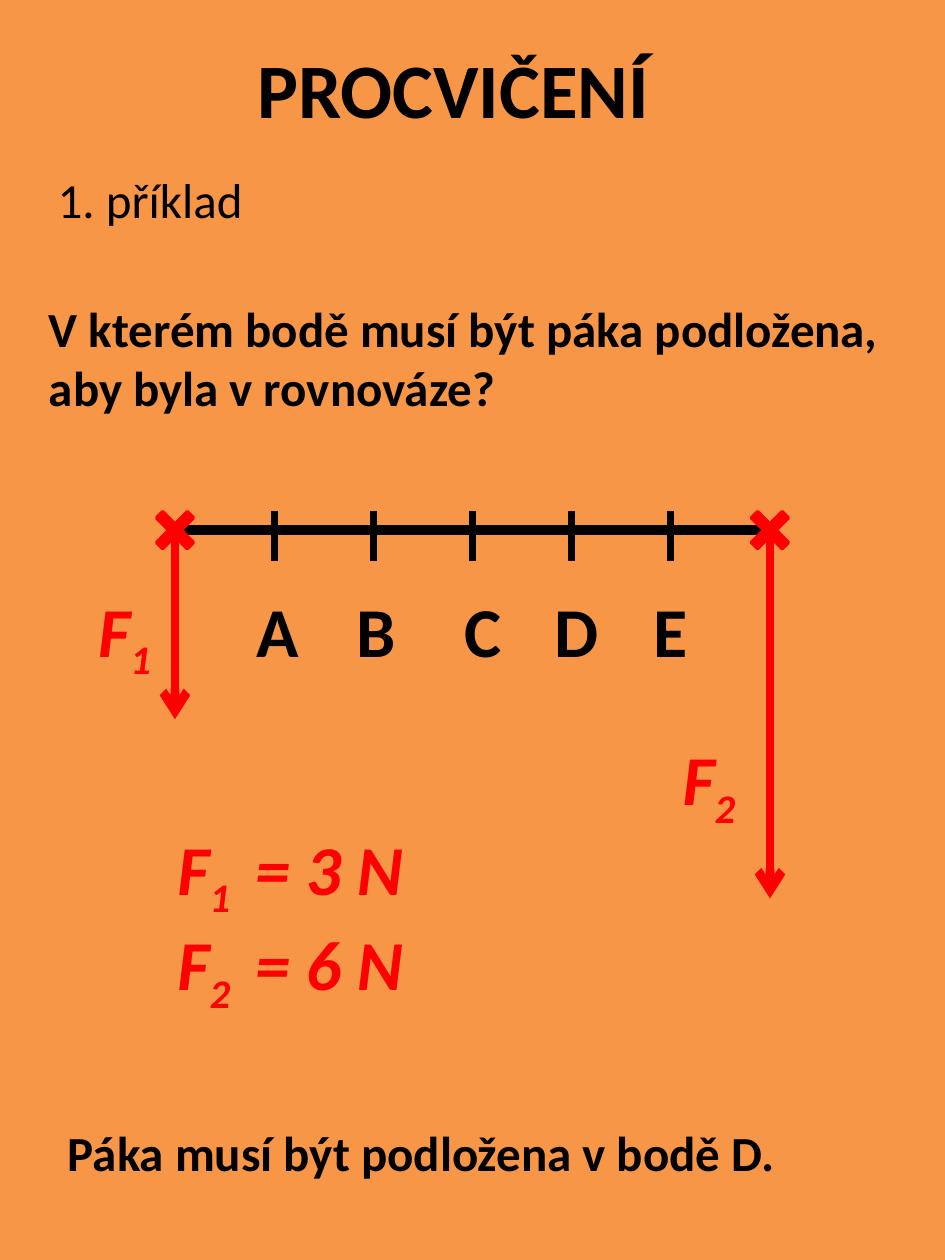
from dataclasses import dataclass
from typing import NamedTuple

import pptx
import pptx.dml.color
import pptx.enum.shapes
import pptx.enum.text
import pptx.oxml.ns
import pptx.util
from lxml import etree

Pt = pptx.util.Pt
RGBColor = pptx.dml.color.RGBColor
qn = pptx.oxml.ns.qn


@dataclass(frozen=True)
class Theme:
    font: str = "Calibri"
    background: RGBColor = RGBColor(0xF7, 0x96, 0x46)
    ink: RGBColor = RGBColor(0, 0, 0)
    force: RGBColor = RGBColor(0xFF, 0, 0)
    title: int = 44
    label: int = 40
    body: int = 28


THEME = Theme()


class Span(NamedTuple):
    text: str
    subscript: bool = False


class Frame(NamedTuple):
    left: float
    top: float
    width: float
    height: float


@dataclass(frozen=True)
class Label:
    frame: Frame
    lines: list[list[Span]]
    size: int
    color: RGBColor = THEME.ink
    bold: bool = True
    italic: bool = False
    wrap: bool = False


class Line(NamedTuple):
    start: tuple[float, float]
    end: tuple[float, float]
    color: RGBColor
    width: float
    arrow: bool = False


def place(shape, frame: Frame) -> None:
    shape.left, shape.top, shape.width, shape.height = map(Pt, frame)


def write_text(box, label: Label) -> None:
    text = box.text_frame
    text.word_wrap = label.wrap
    text.auto_size = pptx.enum.text.MSO_AUTO_SIZE.SHAPE_TO_FIT_TEXT
    text.vertical_anchor = pptx.enum.text.MSO_ANCHOR.TOP
    for number, spans in enumerate(label.lines):
        para = text.add_paragraph() if number else text.paragraphs[0]
        para.alignment = pptx.enum.text.PP_ALIGN.LEFT
        for span in spans:
            run = para.add_run()
            run.text = span.text
            run.font.name = THEME.font
            run.font.size = Pt(label.size)
            run.font.bold = label.bold
            run.font.italic = label.italic
            run.font.color.rgb = label.color
            if span.subscript:
                run.font._element.set("baseline", "-25000")


def add_label(page, label: Label) -> None:
    write_text(page.shapes.add_textbox(*map(Pt, label.frame)), label)


def add_line(page, line: Line) -> None:
    connector = page.shapes.add_connector(
        pptx.enum.shapes.MSO_CONNECTOR.STRAIGHT, *map(Pt, line.start + line.end)
    )
    connector.line.color.rgb = line.color
    connector.line.width = Pt(line.width)
    properties = connector._element.spPr
    if line.arrow:
        etree.SubElement(properties.find(qn("a:ln")), qn("a:tailEnd"), type="arrow")
    etree.SubElement(properties, qn("a:effectLst"))


def add_cross(page, center: tuple[float, float], size: float) -> None:
    x, y = center
    cross = page.shapes.add_shape(
        pptx.enum.shapes.MSO_SHAPE.MATH_MULTIPLY,
        Pt(x - size / 2), Pt(y - size / 2), Pt(size), Pt(size),
    )
    cross.adjustments[0] = 0.146
    cross.shadow.inherit = False
    cross.fill.solid()
    cross.fill.fore_color.rgb = THEME.force
    cross.line.color.rgb = THEME.force
    cross.line.width = Pt(2)


def force_label(left: float, top: float, index: str) -> Label:
    return Label(Frame(left, top, 46.8, 55.4), [[Span("F"), Span(index, True)]],
                 THEME.label, THEME.force, italic=True)


def add_lever(page) -> None:
    left, right, level = 100, 440, 303
    step = (right - left) / 6
    add_line(page, Line((left, level), (right, level), THEME.ink, 6))
    for x, tip in ((left, 411), (right, 513.4)):
        add_line(page, Line((x, level), (x, tip), THEME.force, 5, True))
    add_label(page, force_label(49, 332, "1"))
    add_label(page, force_label(383, 417, "2"))
    points = (("A", 139.7, 38.9), ("B", 196.6, 37.4), ("C", 258.5, 36),
              ("D", 309.6, 40.3), ("E", 366.5, 33.8))
    for number, (letter, label_left, width) in enumerate(points, 1):
        x = left + number * step
        add_line(page, Line((x, 292.3), (x, 320.4), THEME.ink, 4))
        add_label(page, Label(Frame(label_left, 332, width, 55.4),
                              [[Span(letter)]], THEME.label))
    for x in (left, right):
        add_cross(page, (x, level), 33.8)


def main() -> None:
    deck = pptx.Presentation()
    deck.slide_width, deck.slide_height = Pt(540), Pt(720)
    page = deck.slides.add_slide(deck.slide_layouts[5])
    page.background.fill.solid()
    page.background.fill.fore_color.rgb = THEME.background

    title = Label(Frame(139.7, 20.2, 240.5, 60.5), [[Span("PROCVIČENÍ")]], THEME.title)
    place(page.shapes.title, title.frame)
    write_text(page.shapes.title, title)

    add_label(page, Label(Frame(25.9, 93.6, 121.7, 41), [[Span("1. příklad")]],
                          THEME.body, bold=False))
    question = "V kterém bodě musí být páka podložena, aby byla v rovnováze?"
    add_label(page, Label(Frame(20.9, 167, 488.9, 74.9), [[Span(question)]],
                          THEME.body, wrap=True))
    add_lever(page)
    values = [[Span("F"), Span(f"{index} ", True), Span(f" = {newtons} N")]
              for index, newtons in ((1, 3), (2, 6))]
    add_label(page, Label(Frame(94.3, 468, 162, 133.2), values,
                          THEME.label, THEME.force, italic=True))
    add_label(page, Label(Frame(31.7, 638, 422.6, 41),
                          [[Span("Páka musí být podložena v bodě D.")]], THEME.body))
    deck.save("out.pptx")


if __name__ == "__main__":
    main()
